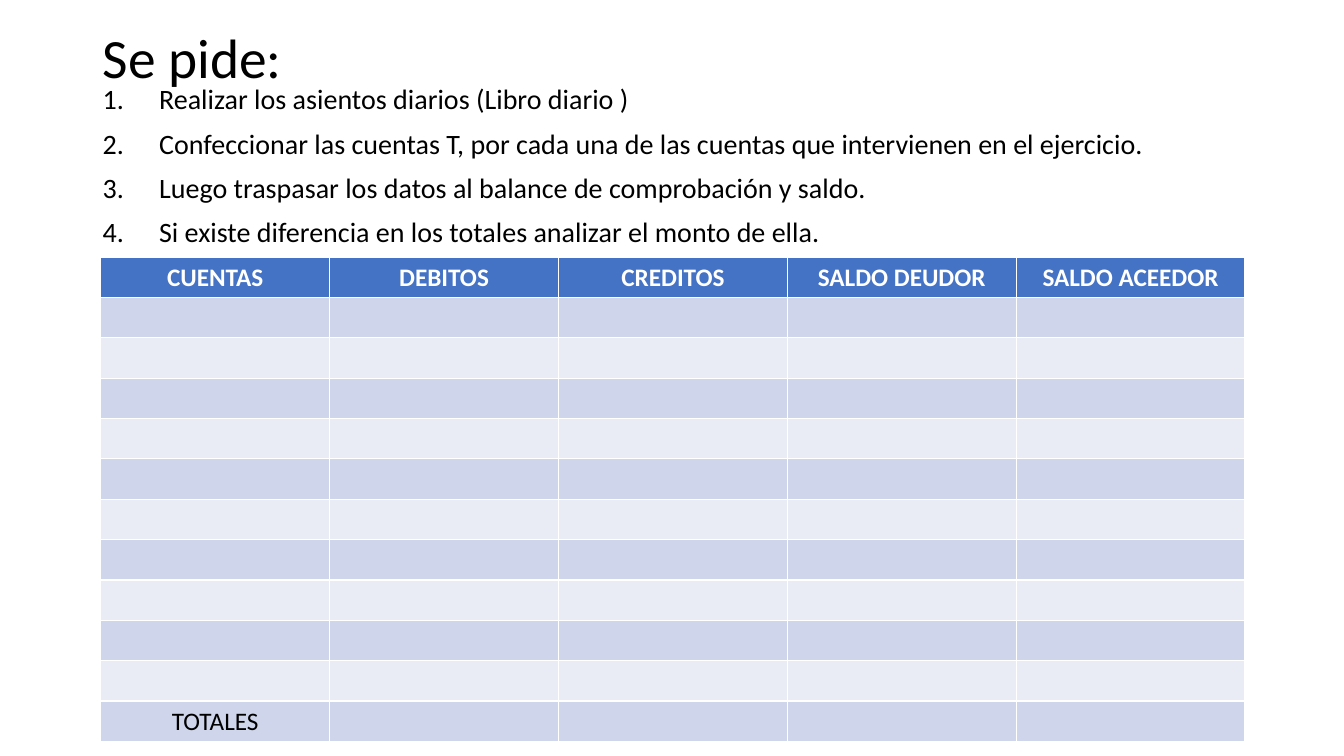
from pptx import Presentation
from pptx.dml.color import RGBColor
from pptx.enum.text import MSO_ANCHOR, MSO_AUTO_SIZE, PP_ALIGN
from pptx.oxml.ns import qn
from pptx.util import Inches, Pt
from lxml.etree import SubElement

BLACK = RGBColor(0x00, 0x00, 0x00)
WHITE = RGBColor(0xFF, 0xFF, 0xFF)
HEADER_BLUE = RGBColor(0x44, 0x72, 0xC4)
BAND_DARK = RGBColor(0xCF, 0xD5, 0xEA)
BAND_LIGHT = RGBColor(0xE9, 0xEB, 0xF5)

TASKS = [
    "Realizar los asientos diarios (Libro diario )",
    "Confeccionar las cuentas T, por cada una de las cuentas que intervienen en el ejercicio.",
    "Luego traspasar los datos al balance de comprobación y saldo.",
    "Si existe diferencia en los totales analizar el monto de ella.",
]
HEADERS = ["CUENTAS", "DEBITOS", "CREDITOS", "SALDO DEUDOR", "SALDO ACEEDOR"]
ROW_COUNT = 12
COLUMN_WIDTH = 2.27
ROW_HEIGHT = 0.4


def add_span(para, text, size, color, bold=False):
    span = para.add_run()
    span.text = text
    span.font.name = "Calibri"
    span.font.size = Pt(size)
    span.font.bold = bold
    span.font.color.rgb = color


deck = Presentation()
deck.slide_width = Inches(13.33)
deck.slide_height = Inches(7.5)
page = deck.slides.add_slide(deck.slide_layouts[5])

title = page.shapes.title
title.left, title.top = Inches(0.92), Inches(0.4)
title.width, title.height = Inches(11.5), Inches(0.4)
title.text_frame.auto_size = MSO_AUTO_SIZE.NONE
title.text_frame.vertical_anchor = MSO_ANCHOR.MIDDLE
para = title.text_frame.paragraphs[0]
para.alignment = PP_ALIGN.LEFT
para.line_spacing = 0.9
add_span(para, "Se pide:", 39.6, BLACK)

task_box = page.shapes.add_textbox(Inches(0.92), Inches(0.8), Inches(11.5), Inches(5.95))
task_box.text_frame.word_wrap = True
for index, task in enumerate(TASKS):
    para = task_box.text_frame.paragraphs[0] if index == 0 else task_box.text_frame.add_paragraph()
    para.line_spacing = 0.9
    para.space_before = Pt(10)
    add_span(para, task, 20, BLACK)
    properties = para._p.get_or_add_pPr()
    properties.set("marL", str(Inches(0.56)))
    properties.set("indent", str(-Inches(0.56)))
    SubElement(properties, qn("a:buFont"), typeface="+mj-lt")
    SubElement(properties, qn("a:buAutoNum"), type="arabicPeriod")

balance = page.shapes.add_table(
    ROW_COUNT, len(HEADERS), Inches(1), Inches(2.55),
    Inches(COLUMN_WIDTH * len(HEADERS)), Inches(ROW_HEIGHT * ROW_COUNT),
).table
for column in balance.columns:
    column.width = Inches(COLUMN_WIDTH)
for row_index, row in enumerate(balance.rows):
    row.height = Inches(ROW_HEIGHT)
    for cell in row.cells:
        cell.fill.solid()
        cell.fill.fore_color.rgb = BAND_DARK if row_index % 2 else BAND_LIGHT
        para = cell.text_frame.paragraphs[0]
        para.alignment = PP_ALIGN.CENTER
        para.font.name = "Calibri"
        para.font.size = Pt(18)

for column_index, header in enumerate(HEADERS):
    cell = balance.cell(0, column_index)
    cell.fill.fore_color.rgb = HEADER_BLUE
    add_span(cell.text_frame.paragraphs[0], header, 18, WHITE, bold=True)

totals = balance.cell(ROW_COUNT - 1, 0)
add_span(totals.text_frame.paragraphs[0], "TOTALES", 18, BLACK)

deck.save("out.pptx")
